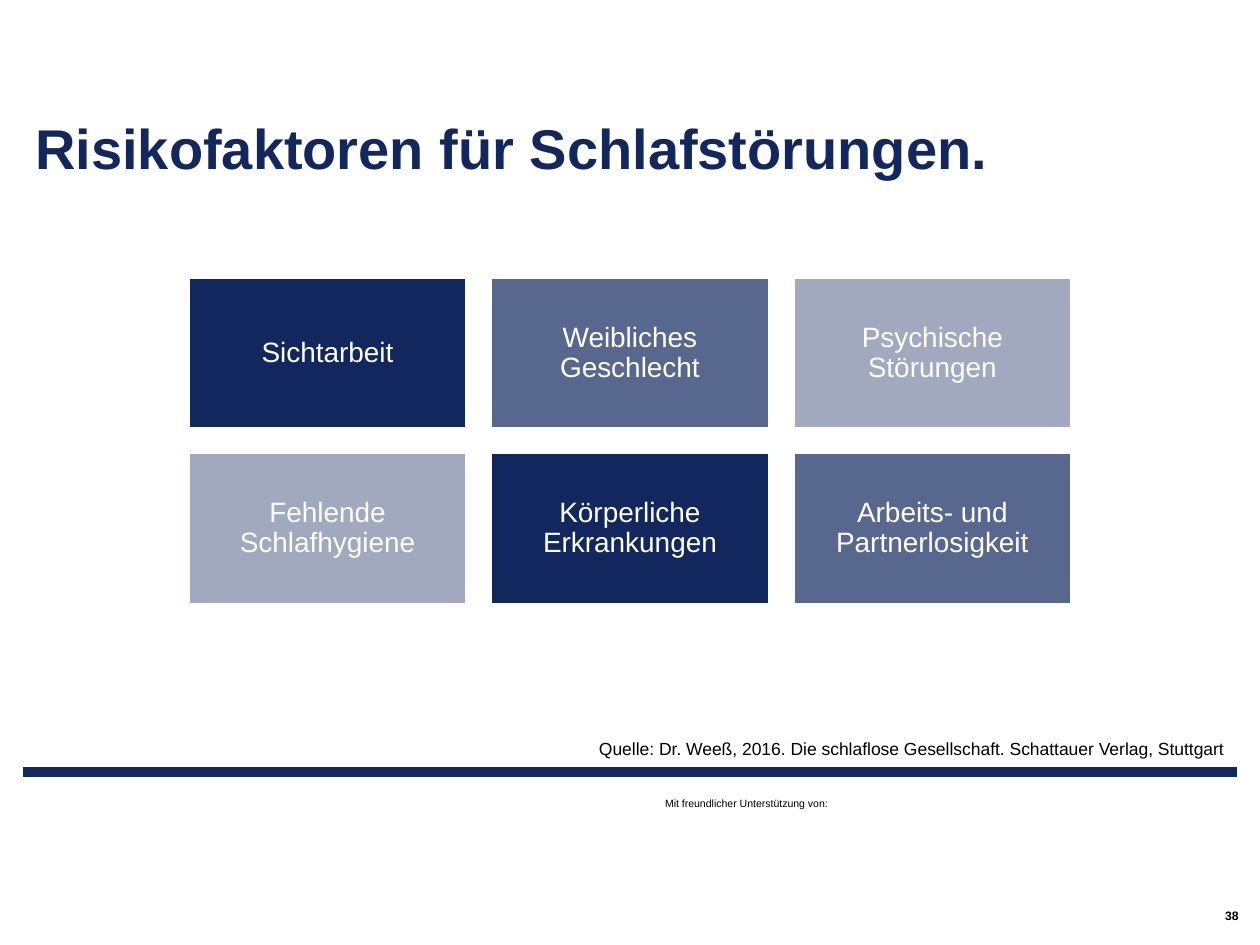
from dataclasses import dataclass

import pptx
import pptx.util
from lxml import etree
from pptx.dml.color import RGBColor
from pptx.enum.shapes import MSO_CONNECTOR, MSO_SHAPE
from pptx.enum.text import MSO_ANCHOR, MSO_AUTO_SIZE, PP_ALIGN
from pptx.oxml.ns import qn
from pptx.util import Inches, Pt


@dataclass(frozen=True)
class Theme:
    font: str = "Arial"
    navy: str = "11275D"
    slate: str = "58678D"
    mist: str = "A0A9BE"
    white: str = "FFFFFF"
    black: str = "000000"
    title: int = 32
    tile: int = 16
    source: int = 10
    number: int = 7
    sponsor: int = 6


THEME = Theme()

RISK_FACTORS = [
    [("Sichtarbeit", THEME.navy),
     ("Weibliches Geschlecht", THEME.slate),
     ("Psychische Störungen", THEME.mist)],
    [("Fehlende Schlafhygiene", THEME.mist),
     ("Körperliche Erkrankungen", THEME.navy),
     ("Arbeits- und Partnerlosigkeit", THEME.slate)],
]


def place(sp, left, top, width, height):
    box = {"left": left, "top": top, "width": width, "height": height}
    for name, value in box.items():
        setattr(sp, name, Inches(value))


def write(sp, text, size, color, bold=False, align=PP_ALIGN.LEFT,
          anchor=MSO_ANCHOR.TOP, insets=(0.1, 0.05), spacing=None):
    """Fill a shape with one paragraph; insets are (sides, top and bottom)."""
    tf = sp.text_frame
    side, edge = (Inches(inset) for inset in insets)
    frame = {"word_wrap": True, "auto_size": MSO_AUTO_SIZE.NONE,
             "vertical_anchor": anchor, "margin_left": side,
             "margin_right": side, "margin_top": edge, "margin_bottom": edge}
    for name, value in frame.items():
        setattr(tf, name, value)
    p = tf.paragraphs[0]
    p.alignment = align
    p.line_spacing = spacing
    r = p.add_run()
    r.text = text
    for name, value in {"name": THEME.font, "size": Pt(size), "bold": bold}.items():
        setattr(r.font, name, value)
    r.font.color.rgb = RGBColor.from_string(color)


def add_title(s, text):
    sp = s.shapes.title
    place(sp, 0.18, 0.39, 9.23, 1.05)
    write(sp, text, THEME.title, THEME.navy, bold=True,
          anchor=MSO_ANCHOR.BOTTOM, insets=(0.1, 0), spacing=0.9)


def add_label(s, box, text, size, **style):
    sp = s.shapes.add_textbox(*(Inches(value) for value in box))
    write(sp, text, size, THEME.black, **style)


def add_rule(s, left, right, y):
    line = s.shapes.add_connector(
        MSO_CONNECTOR.STRAIGHT, Inches(left), Inches(y), Inches(right), Inches(y))
    line.line.color.rgb = RGBColor.from_string(THEME.navy)
    line.line.width = Pt(5.67)
    etree.SubElement(line._element.spPr, qn("a:effectLst"))


def add_tile(s, box, text, color):
    sp = s.shapes.add_shape(MSO_SHAPE.RECTANGLE, *(Inches(value) for value in box))
    sp.shadow.inherit = False
    sp.fill.solid()
    sp.fill.fore_color.rgb = RGBColor.from_string(color)
    sp.line.color.rgb = RGBColor.from_string(THEME.white)
    sp.line.width = Pt(1)
    write(sp, text, THEME.tile, THEME.white, align=PP_ALIGN.CENTER,
          anchor=MSO_ANCHOR.MIDDLE, insets=(0.07, 0.07), spacing=0.9)


def add_tile_grid(s, rows):
    left, top, width, height, gap = 1.5, 2.21, 2.2, 1.19, 0.2
    for i, row in enumerate(rows):
        for j, (text, color) in enumerate(row):
            box = (left + j * (width + gap), top + i * (height + gap), width, height)
            add_tile(s, box, text, color)


def main():
    prs = pptx.Presentation()
    prs.slide_width, prs.slide_height = Inches(10), Inches(7.5)
    s = prs.slides.add_slide(prs.slide_layouts.get_by_name("Title Only"))
    add_rule(s, 0.18, 9.82, 6.13)
    add_label(s, (5.18, 6.28, 2.03, 0.2), "Mit freundlicher Unterstützung von:",
              THEME.sponsor)
    add_title(s, "Risikofaktoren für Schlafstörungen.")
    add_label(s, (6.45, 7.19, 3.38, 0.16), "38", THEME.number, bold=True,
              align=PP_ALIGN.RIGHT, anchor=MSO_ANCHOR.MIDDLE, insets=(0, 0))
    add_label(s, (3.81, 5.81, 6, 0.27),
              "Quelle: Dr. Weeß, 2016. Die schlaflose Gesellschaft. "
              "Schattauer Verlag, Stuttgart",
              THEME.source, align=PP_ALIGN.RIGHT)
    add_tile_grid(s, RISK_FACTORS)
    prs.save("out.pptx")


if __name__ == "__main__":
    main()
